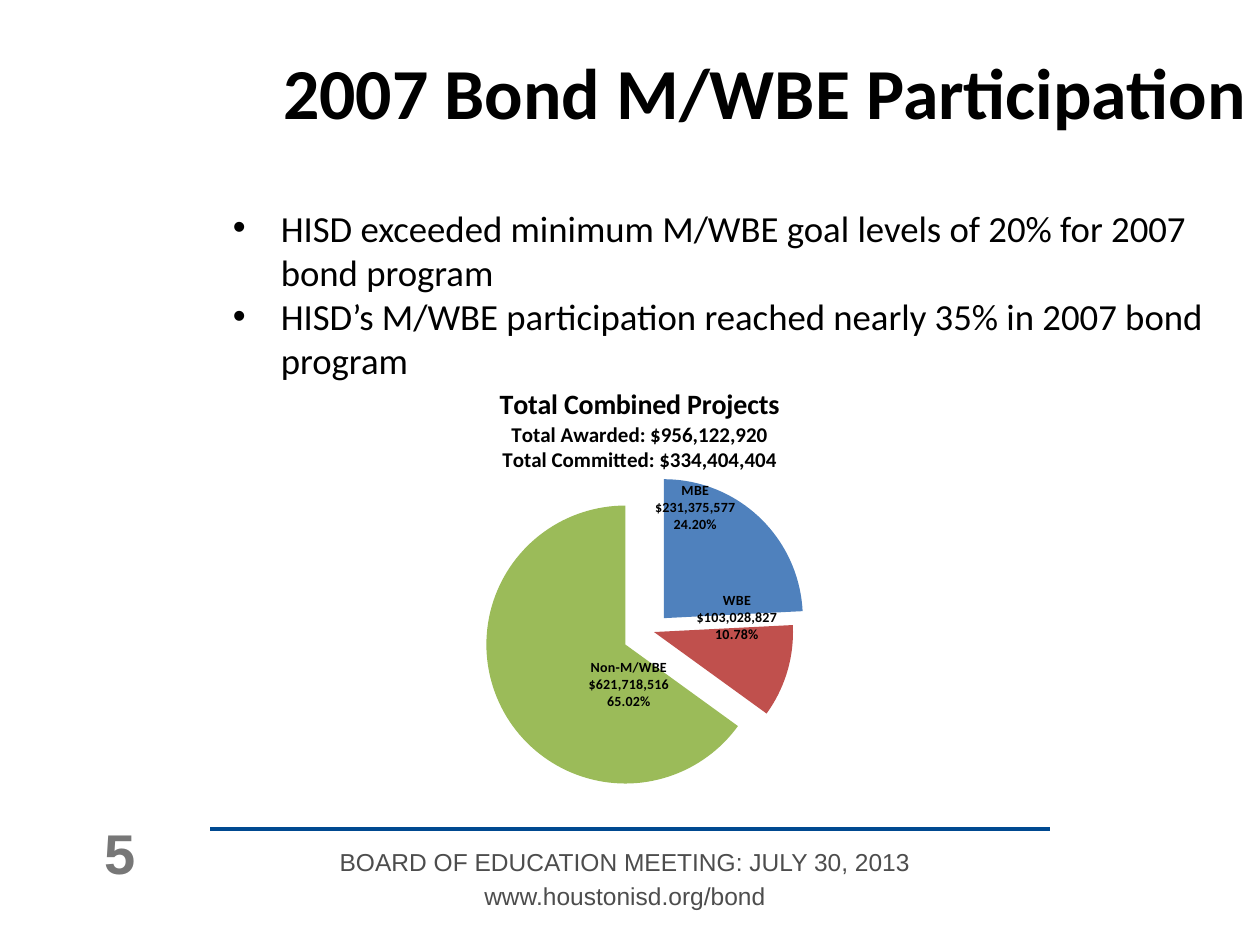
import copy
import lxml.etree
import pptx
import pptx.chart.data
import pptx.dml.color
import pptx.enum.chart
import pptx.enum.shapes
import pptx.enum.text
import pptx.oxml
import pptx.oxml.ns
import pptx.util

Inches = pptx.util.Inches
Pt = pptx.util.Pt
qn = pptx.oxml.ns.qn
Align = pptx.enum.text.PP_ALIGN
Anchor = pptx.enum.text.MSO_ANCHOR


def color(code):
    return pptx.dml.color.RGBColor.from_string(code)


def node(tag, **attrs):
    item = lxml.etree.Element(qn(tag))
    for key, value in attrs.items():
        item.set(key, str(value))
    return item


def layout(**spots):
    item = node("c:layout")
    inner = lxml.etree.SubElement(item, qn("c:manualLayout"))
    for key, value in spots.items():
        inner.append(node("c:" + key, val=value))
    return item


class Deck:
    """Holds the style and the current slide and adds elements to it."""

    styles = {
        "title": {"name": "Calibri", "size": Pt(41), "bold": True, "color": "000000"},
        "body": {"name": "Calibri", "size": Pt(21), "color": "000000"},
        "foot": {"name": "Arial", "size": Pt(14), "color": "4D4D4D"},
        "page": {"name": "Arial", "size": Pt(32), "bold": True, "color": "777777"},
        "chart": {"name": "Calibri", "size": Pt(10), "color": "000000"},
        "head": {"name": "Calibri", "size": Pt(16), "bold": True, "color": "000000"},
        "sub": {"name": "Calibri", "size": Pt(12), "bold": True, "color": "000000"},
        "label": {"name": "Calibri", "size": Pt(8), "bold": True, "color": "000000"},
    }

    def __init__(self, width, height):
        self.show = pptx.Presentation()
        self.show.slide_width = Inches(width)
        self.show.slide_height = Inches(height)
        self.slide = self.show.slides.add_slide(self.show.slide_layouts[6])

    def format(self, font, style):
        for key, value in self.styles[style].items():
            if key == "color":
                font.color.rgb = color(value)
            else:
                setattr(font, key, value)

    def text(self, box, lines, style, align=Align.LEFT, anchor=Anchor.TOP, gap=0, bullet=False):
        frame = self.slide.shapes.add_textbox(*map(Inches, box)).text_frame
        frame.word_wrap = True
        frame.vertical_anchor = anchor
        for index, line in enumerate(lines):
            para = frame.add_paragraph() if index else frame.paragraphs[0]
            para.alignment = align
            if index and gap:
                para.space_before = Pt(gap)
            if bullet:
                props = para._p.get_or_add_pPr()
                props.set("marL", str(Inches(0.38)))
                props.set("indent", str(-Inches(0.38)))
                props.append(node("a:buFont", typeface="Arial"))
                props.append(node("a:buChar", char="•"))
            run = para.add_run()
            run.text = line
            self.format(run.font, style)

    def line(self, start, end, code, width):
        kind = pptx.enum.shapes.MSO_CONNECTOR.STRAIGHT
        rule = self.slide.shapes.add_connector(kind, *map(Inches, start + end))
        rule.line.color.rgb = color(code)
        rule.line.width = Pt(width)
        rule._element.spPr.append(node("a:effectLst"))

    def pie(self, box, title, slices):
        data = pptx.chart.data.CategoryChartData(number_format='"$"#,##0')
        data.categories = [part[0] for part in slices]
        data.add_series("Series 1", [part[1] for part in slices])
        kind = pptx.enum.chart.XL_CHART_TYPE.PIE
        chart = self.slide.shapes.add_chart(kind, *map(Inches, box), data).chart
        self.format(chart.font, "chart")
        chart.has_legend = False
        chart.has_title = True
        frame = chart.chart_title.text_frame
        for index, line in enumerate(title):
            para = frame.add_paragraph() if index else frame.paragraphs[0]
            run = para.add_run()
            run.text = line
            self.format(run.font, "sub" if index else "head")
        head = chart.chart_title._element
        area = chart._chartSpace.chart.plotArea
        for part in (head, area):
            for old in part.findall(qn("c:layout")):
                part.remove(old)
        head.find(qn("c:tx")).addnext(layout(xMode="edge", yMode="edge", x=0.31, y=0.01))
        area.insert(0, layout(layoutTarget="inner", xMode="edge", yMode="edge", x=0, y=0.2, w=1, h=0.79))
        chart.plots[0].vary_by_categories = True
        series = chart.plots[0].series[0]
        for index, part in enumerate(slices):
            fill = series.points[index].format.fill
            fill.solid()
            fill.fore_color.rgb = color(part[2])
        for point, part in zip(series._element.findall(qn("c:dPt")), slices):
            point.find(qn("c:spPr")).addprevious(node("c:explosion", val=part[3]))
        series._element.find(qn("c:dPt")).addprevious(node("c:explosion", val=21))
        self.label(series.data_labels, [part[4] for part in slices])

    def label(self, labels, shifts):
        self.format(labels.font, "label")
        values = {
            "show_value": True,
            "show_category_name": True,
            "show_percentage": True,
            "number_format": "0.00%",
            "number_format_is_linked": False,
            "position": pptx.enum.chart.XL_LABEL_POSITION.CENTER,
        }
        for key, value in values.items():
            setattr(labels, key, value)
        root = labels._element
        for old in root.findall(qn("c:showLeaderLines")):
            root.remove(old)
        mark = node("c:separator")
        mark.text = "\n"
        root.append(mark)
        shared = list(root)
        for index, (x, y) in enumerate(shifts):
            item = node("c:dLbl")
            item.append(node("c:idx", val=index))
            item.append(layout(x=x, y=y))
            item.extend(copy.deepcopy(shared))
            root.insert(index, item)
        root.append(node("c:showLeaderLines", val=0))


def main():
    deck = Deck(10, 7.5)
    deck.text((0.42, 6.45, 1.06, 0.63), ["5"], "page", Align.CENTER, Anchor.BOTTOM)
    deck.line((1.67, 6.58), (8.33, 6.58), "004990", 2)
    footer = ["BOARD OF EDUCATION MEETING: JULY 30, 2013", "www.houstonisd.org/bond"]
    deck.text((1.5, 6.67, 6.92, 0.55), footer, "foot", Align.CENTER, gap=3)
    deck.text((2, 0.33, 8, 0.83), ["2007 Bond M/WBE Participation"], "title", Align.RIGHT)
    points = [
        "HISD exceeded minimum M/WBE goal levels of 20% for 2007 bond program",
        "HISD’s M/WBE participation reached nearly 35% in 2007 bond program",
    ]
    deck.text((1.75, 1.58, 7.92, 4.92), points, "body", bullet=True)
    title = [
        "Total Combined Projects",
        "Total Awarded: $956,122,920",
        "Total Committed: $334,404,404",
    ]
    slices = [
        ("MBE", 231375577, "4F81BD", 13, (-0.02, -0.14)),
        ("WBE", 103028827, "C0504D", 2, (0.02, -0.08)),
        ("Non-M/WBE", 621718516, "9BBB59", 21, (0.08, 0.02)),
    ]
    deck.pie((1.92, 3, 6.5, 3.38), title, slices)
    deck.show.save("out.pptx")


if __name__ == "__main__":
    main()
